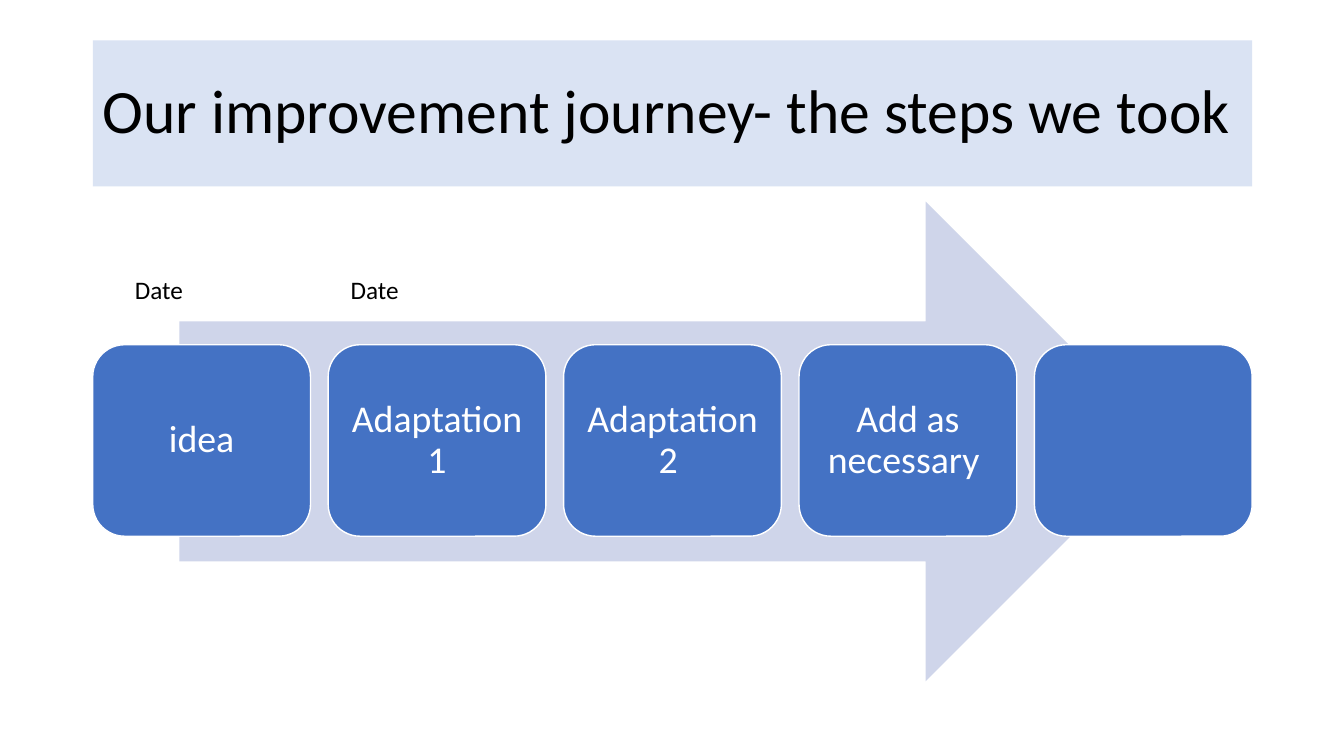
"""Build the improvement journey slide: a title, an arrow and five dated steps."""
from pptx import Presentation
from pptx import util as u
from pptx.dml.color import RGBColor
from pptx.enum import shapes, text

BLACK = RGBColor(0x00, 0x00, 0x00)
WHITE = RGBColor(0xFF, 0xFF, 0xFF)
BLUE = RGBColor(0x44, 0x72, 0xC4)
PALE_BLUE = RGBColor(0xDA, 0xE3, 0xF3)
ARROW_BLUE = RGBColor(0xCF, 0xD5, 0xEA)

LEFT, WIDTH = 0.92, 11.5
STEP_W, STEP_H, STEP_TOP = 2.16, 1.9, 3.42
STEPS = ["idea", "Adaptation 1", "Adaptation 2 ", "Add as necessary ", ""]
PITCH = (WIDTH - STEP_W) / (len(STEPS) - 1)


def write(tf, words, size, color, align=text.PP_ALIGN.LEFT, spacing=1.0):
    tf.word_wrap = True
    tf.text = words
    p = tf.paragraphs[0]
    p.alignment = align
    p.line_spacing = spacing
    for r in p.runs:
        r.font.name = "Calibri"
        r.font.size = u.Pt(size)
        r.font.color.rgb = color


def add_block(kind, x, y, w, h, color):
    sp = s.shapes.add_shape(kind, u.Inches(x), u.Inches(y), u.Inches(w), u.Inches(h))
    sp.shadow.inherit = False
    sp.fill.solid()
    sp.fill.fore_color.rgb = color
    sp.line.fill.background()
    return sp


prs = Presentation()
prs.slide_width, prs.slide_height = u.Inches(13.33), u.Inches(7.5)
s = prs.slides.add_slide(prs.slide_layouts[5])

title = s.shapes.title
title.left, title.top = u.Inches(LEFT), u.Inches(0.4)
title.width, title.height = u.Inches(WIDTH), u.Inches(1.45)
title.fill.solid()
title.fill.fore_color.rgb = PALE_BLUE
tf = title.text_frame
tf.auto_size = text.MSO_AUTO_SIZE.NONE
tf.vertical_anchor = text.MSO_ANCHOR.MIDDLE
write(tf, "Our improvement journey- the steps we took", 44, BLACK, spacing=0.9)

add_block(shapes.MSO_SHAPE.RIGHT_ARROW, 1.78, 2, 9.78, 4.76, ARROW_BLUE)

for i, step in enumerate(STEPS):
    sp = add_block(shapes.MSO_SHAPE.ROUNDED_RECTANGLE,
                   LEFT + i * PITCH, STEP_TOP, STEP_W, STEP_H, BLUE)
    sp.line.color.rgb = WHITE
    sp.line.width = u.Pt(1)
    tf = sp.text_frame
    tf.margin_left = tf.margin_right = tf.margin_top = tf.margin_bottom = u.Inches(0.11)
    tf.vertical_anchor = text.MSO_ANCHOR.MIDDLE
    write(tf, step, 27, WHITE, text.PP_ALIGN.CENTER, 0.9)

for x in (1.24, 3.38):
    sp = s.shapes.add_textbox(u.Inches(x), u.Inches(2.67), u.Inches(1.34), u.Inches(0.4))
    sp.text_frame.auto_size = text.MSO_AUTO_SIZE.SHAPE_TO_FIT_TEXT
    write(sp.text_frame, "Date", 18, BLACK)

prs.save("out.pptx")
